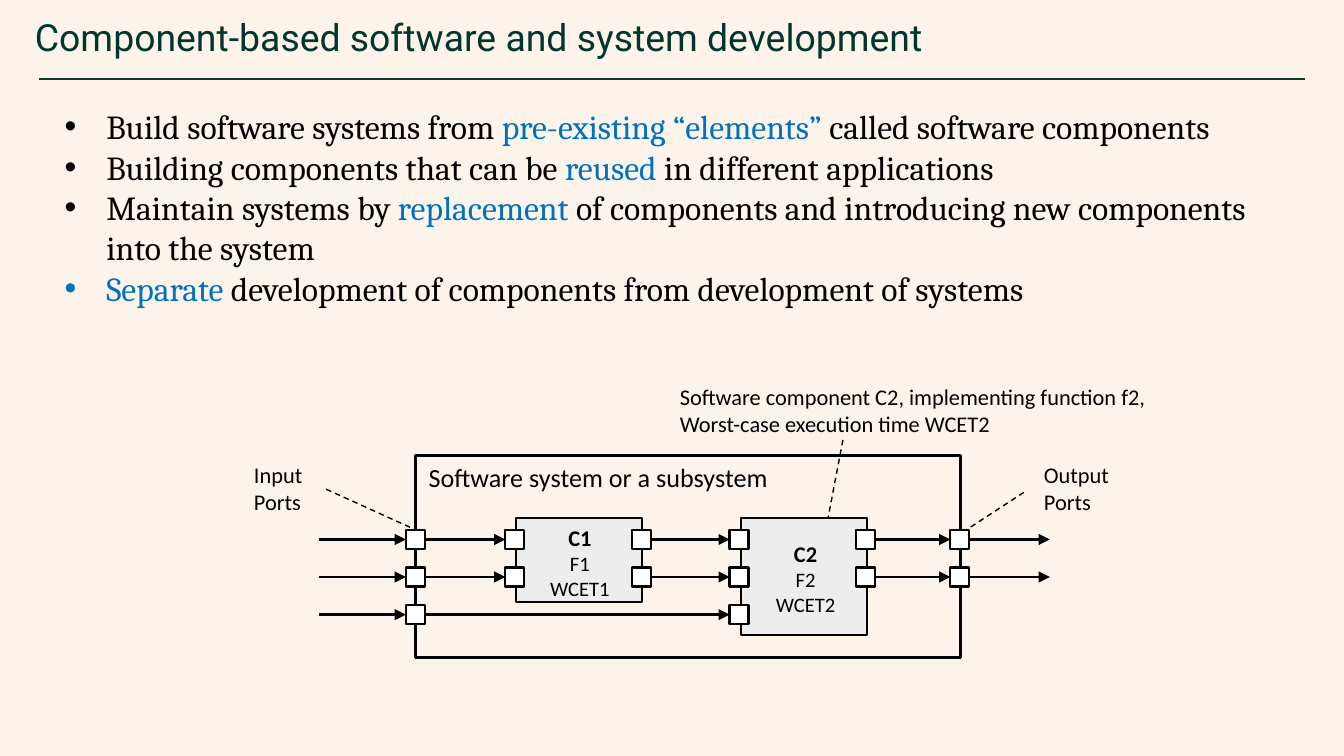
"""Build the slide on component-based software and system development."""
from dataclasses import dataclass
from itertools import pairwise

from lxml.etree import SubElement
from pptx import Presentation
from pptx.dml.color import RGBColor
from pptx.enum.dml import MSO_LINE
from pptx.enum.shapes import MSO_CONNECTOR, MSO_SHAPE
from pptx.enum.text import MSO_ANCHOR, PP_ALIGN
from pptx.oxml.ns import qn
from pptx.util import Cm, Pt


@dataclass(frozen=True)
class Theme:
    paper: str = "FCF4EB"
    title: str = "00362D"
    rule: str = "13342D"
    ink: str = "000000"
    accent: str = "0070C0"
    component: str = "EDEDED"
    port: str = "FFFFFF"
    title_font: str = "Roboto"
    body_font: str = "Cambria"
    label_font: str = "Calibri"
    title_size: int = 20
    body_size: int = 18
    frame_size: int = 14
    label_size: int = 12
    detail_size: int = 11


class SlideBuilder:
    def __init__(self, page, theme):
        self.page = page
        self.theme = theme
        page.background.fill.solid()
        page.background.fill.fore_color.rgb = RGBColor.from_string(theme.paper)

    def span(self, para, text, font, size, color, bold=False):
        run = para.add_run()
        run.text = text
        run.font.name = font
        run.font.size = Pt(size)
        run.font.bold = bold
        run.font.color.rgb = RGBColor.from_string(color)

    def text_frame(self, left, top, width, height):
        box = self.page.shapes.add_textbox(Cm(left), Cm(top), Cm(width), Cm(height))
        box.text_frame.word_wrap = True
        return box.text_frame

    def paragraphs(self, frame, items):
        for index, item in enumerate(items):
            yield (frame.add_paragraph() if index else frame.paragraphs[0]), item

    def title(self, text, left, top, width, height):
        frame = self.text_frame(left, top, width, height)
        frame.vertical_anchor = MSO_ANCHOR.MIDDLE
        para = frame.paragraphs[0]
        para.line_spacing = 0.9
        self.span(para, text, self.theme.title_font, self.theme.title_size, self.theme.title)

    def bullets(self, items, left, top, width, height, indent):
        frame = self.text_frame(left, top, width, height)
        for para, item in self.paragraphs(frame, items):
            properties = para._p.get_or_add_pPr()
            properties.set("marL", str(Cm(indent)))
            properties.set("indent", str(-Cm(indent)))
            SubElement(properties, qn("a:buFont"), typeface="Arial")
            SubElement(properties, qn("a:buChar"), char="•")
            for index, part in enumerate(item.split("|")):
                if part:
                    color = self.theme.accent if index % 2 else self.theme.ink
                    self.span(para, part, self.theme.body_font, self.theme.body_size, color)

    def label(self, lines, left, top, width, height, size):
        frame = self.text_frame(left, top, width, height)
        for para, line in self.paragraphs(frame, lines):
            self.span(para, line, self.theme.label_font, size, self.theme.ink)

    def component_label(self, lines, left, top, width, height):
        frame = self.text_frame(left, top, width, height)
        for para, line in self.paragraphs(frame, lines):
            para.alignment = PP_ALIGN.CENTER
            heading = line == lines[0]
            size = self.theme.label_size if heading else self.theme.detail_size
            self.span(para, line, self.theme.label_font, size, self.theme.ink, heading)

    def block(self, left, top, width, height, weight, fill=None):
        box = self.page.shapes.add_shape(
            MSO_SHAPE.RECTANGLE, Cm(left), Cm(top), Cm(width), Cm(height))
        box.shadow.inherit = False
        if fill:
            box.fill.solid()
            box.fill.fore_color.rgb = RGBColor.from_string(fill)
        else:
            box.fill.background()
        box.line.color.rgb = RGBColor.from_string(self.theme.ink)
        box.line.width = Pt(weight)

    def line(self, start, end, weight, color=None, dashed=False, arrow=False):
        connector = self.page.shapes.add_connector(
            MSO_CONNECTOR.STRAIGHT, *(Cm(value) for value in (*start, *end)))
        connector.line.color.rgb = RGBColor.from_string(color or self.theme.ink)
        connector.line.width = Pt(weight)
        if dashed:
            connector.line.dash_style = MSO_LINE.DASH
        if arrow:
            SubElement(connector.line._get_or_add_ln(), qn("a:tailEnd"), type="triangle")
        SubElement(connector._element.spPr, qn("a:effectLst"))


def draw_ports(slide):
    side, first_row, row_step = 0.36, 10.01, 0.71
    source, sink = 6.03, 19.84
    system_in, c1_in, c1_out, c2_in, c2_out, system_out = 7.67, 9.55, 11.94, 13.79, 16.18, 17.96
    full_row = (system_in, c1_in, c1_out, c2_in, c2_out, system_out)
    rows = (full_row, full_row, (system_in, c2_in))
    inside = {(c1_in, c1_out), (c2_in, c2_out)}
    for index, ports in enumerate(rows):
        top = first_row + index * row_step
        middle = top + side / 2
        slide.line((source, middle), (system_in, middle), 1.5, arrow=True)
        for start, end in pairwise(ports):
            if (start, end) not in inside:
                slide.line((start + side, middle), (end, middle), 1.5, arrow=True)
        if system_out in ports:
            slide.line((system_out + side, middle), (sink, middle), 1.5, arrow=True)
        for left in ports:
            slide.block(left, top, side, side, 1.25, slide.theme.port)


def main():
    deck = Presentation()
    deck.slide_width, deck.slide_height = Cm(25.4), Cm(14.28)
    theme = Theme()
    slide = SlideBuilder(deck.slides.add_slide(deck.slide_layouts[6]), theme)

    slide.line((0.74, 1.5), (24.66, 1.5), 1, theme.rule)
    slide.title("Component-based software and system development", 0.41, -0.48, 21.39, 2.46)
    slide.bullets([
        "Build software systems from |pre-existing “elements” |called software components",
        "Building components that can be |reused| in different applications",
        "Maintain systems by |replacement| of components and introducing new components "
        "into the system",
        "|Separate| development of components from development of systems",
    ], 0.97, 1.88, 23.7, 4.67, 0.79)

    slide.block(7.85, 8.61, 10.31, 3.81, 1.5)
    slide.block(9.75, 9.78, 2.39, 1.6, 1, theme.component)
    slide.block(14, 9.78, 2.39, 2.21, 1, theme.component)
    draw_ports(slide)

    slide.component_label(("C1", "F1", "WCET1"), 10.06, 9.78, 1.8, 1.7)
    slide.component_label(("C2", "F2", "WCET2"), 14.3, 10.08, 1.85, 1.7)
    slide.label(["Software system or a subsystem"], 7.85, 8.59, 7.57, 0.86, theme.frame_size)
    slide.label(["Input", "Ports"], 4.55, 8.59, 1.57, 1.27, theme.label_size)
    slide.label(["Output", "Ports"], 19.48, 8.59, 1.85, 1.27, theme.label_size)
    slide.label(
        ["Software component C2, implementing function f2, Worst-case execution time WCET2"],
        12.6, 7.11, 10.16, 1.27, theme.label_size)

    for start, end in (
        ((7.75, 9.96), (6.12, 9.22)),
        ((19.35, 9.3), (18.26, 10.01)),
        ((15.93, 8.31), (15.65, 9.78)),
    ):
        slide.line(start, end, 0.75, dashed=True)
    deck.save("out.pptx")


if __name__ == "__main__":
    main()
